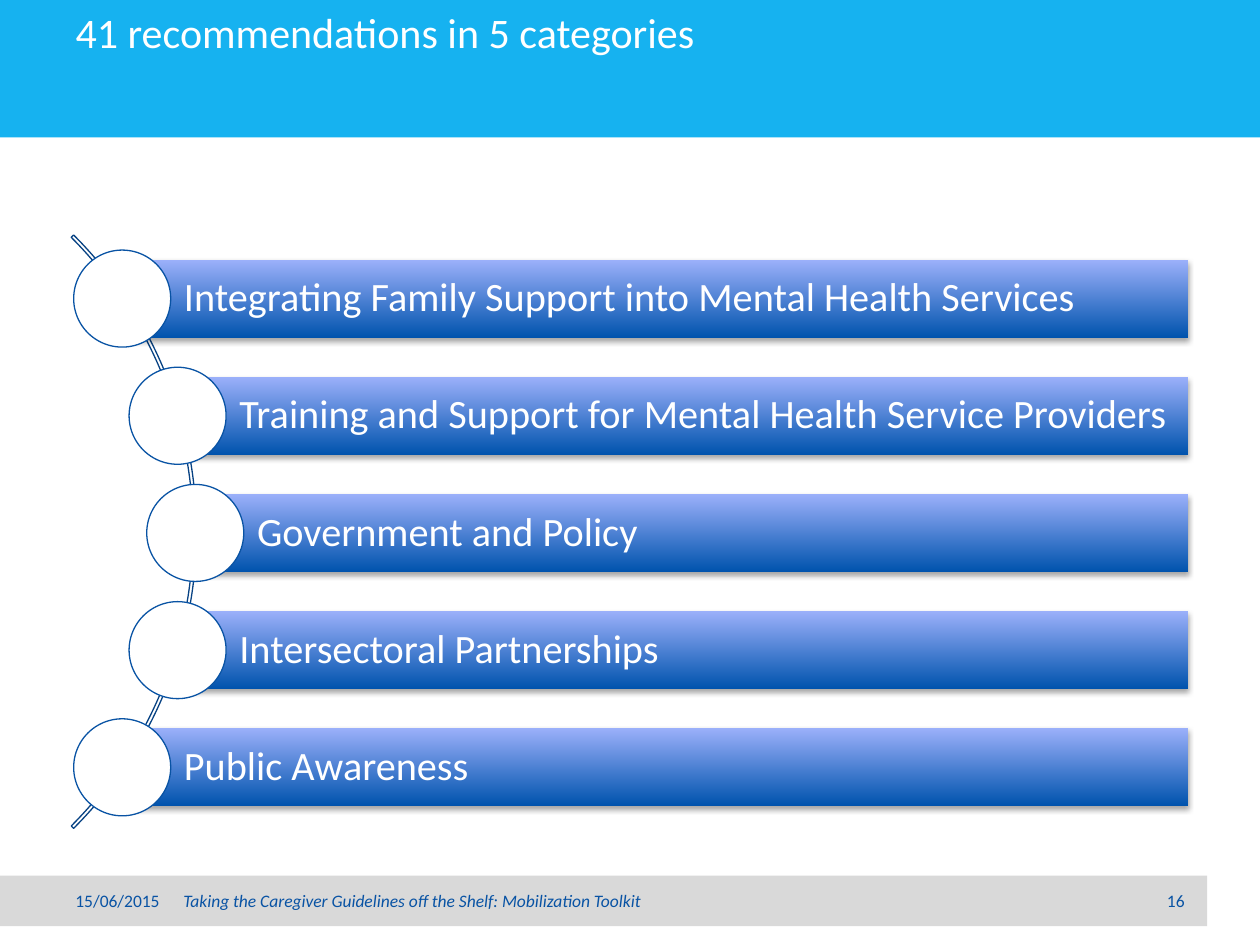
from dataclasses import dataclass

from lxml.etree import SubElement
from pptx import Presentation
from pptx.dml.color import RGBColor
from pptx.enum.shapes import MSO_SHAPE as Shape
from pptx.enum.text import MSO_ANCHOR as Anchor, MSO_AUTO_SIZE as AutoSize, PP_ALIGN as Align
from pptx.oxml.ns import qn
from pptx.util import Inches, Pt


@dataclass(frozen=True)
class Theme:
    font: str = "Calibri"
    white: str = "FFFFFF"
    header: str = "16B2F0"
    footer: str = "D9D9D9"
    ink: str = "0953A4"
    arc: str = "074283"
    bar_dark: str = "0053AD"
    bar_light: str = "9BB0FA"
    shadow: str = "000000"
    title_size: float = 24
    bar_size: float = 23
    footer_size: float = 10


theme = Theme()


def write_text(shape, text, size, color, align=Align.LEFT, anchor=Anchor.MIDDLE,
               italic=False, margins=(0.1, 0.05, 0.1, 0.05), line_spacing=1.0):
    frame = shape.text_frame
    frame.word_wrap = True
    frame.auto_size = AutoSize.NONE
    frame.vertical_anchor = anchor
    frame.margin_left, frame.margin_top, frame.margin_right, frame.margin_bottom = map(Inches, margins)
    paragraph = frame.paragraphs[0]
    paragraph.alignment = align
    paragraph.line_spacing = line_spacing
    run = paragraph.add_run()
    run.text = text
    run.font.name = theme.font
    run.font.size = Pt(size)
    run.font.italic = italic
    run.font.color.rgb = RGBColor.from_string(color)


def add_block(kind, left, top, width, height, fill=None, line=None):
    shape = slide.shapes.add_shape(kind, Inches(left), Inches(top), Inches(width), Inches(height))
    shape.shadow.inherit = False
    if fill:
        shape.fill.solid()
        shape.fill.fore_color.rgb = RGBColor.from_string(fill)
    else:
        shape.fill.background()
    if line:
        shape.line.color.rgb = RGBColor.from_string(line)
        shape.line.width = Pt(0.75)
    else:
        shape.line.fill.background()
    return shape


presentation = Presentation()
presentation.slide_width = Inches(10)
presentation.slide_height = Inches(7.5)
slide = presentation.slides.add_slide(presentation.slide_layouts[5])

add_block(Shape.RECTANGLE, 0, 6.95, 9.58, 0.4, theme.footer)
header = add_block(Shape.RECTANGLE, 0, 0, 10, 1.09, theme.header)

title = slide.shapes.title
header.element.addnext(title.element)
title.left, title.top, title.width, title.height = map(Inches, (0.5, 0, 9, 1.09))
write_text(title, "41 recommendations in 5 categories", theme.title_size, theme.white, anchor=Anchor.TOP)

arc = add_block(Shape.BLOCK_ARC, -5.1, 0.89, 6.66, 6.66, line=theme.arc)
for index, value in enumerate((189, 27, 0.004)):
    arc.adjustments[index] = value

categories = [
    ("Integrating Family Support into Mental Health Services", 0.97),
    ("Training and Support for Mental Health Service Providers", 1.41),
    ("Government and Policy", 1.55),
    ("Intersectoral Partnerships", 1.41),
    ("Public Awareness", 0.97),
]
first_center, pitch = 2.37, 0.93
bar_right, bar_height, circle_size = 9.43, 0.62, 0.77

for index, (category, left) in enumerate(categories):
    center = first_center + index * pitch
    bar = add_block(Shape.RECTANGLE, left, center - bar_height / 2, bar_right - left, bar_height)
    bar.fill.gradient()
    bar.fill.gradient_angle = 90
    for stop, color in zip(bar.fill.gradient_stops, (theme.bar_dark, theme.bar_light)):
        stop.color.rgb = RGBColor.from_string(color)
    effects = bar.element.spPr.find(qn("a:effectLst"))
    shadow = SubElement(effects, qn("a:outerShdw"), blurRad=str(Pt(3.1)), dist=str(Pt(1.8)),
                        dir="5400000", rotWithShape="0")
    shadow_color = SubElement(shadow, qn("a:srgbClr"), val=theme.shadow)
    SubElement(shadow_color, qn("a:alpha"), val="35000")
    write_text(bar, category, theme.bar_size, theme.white, margins=(0.49, 0.06, 0.06, 0.06), line_spacing=0.9)
    add_block(Shape.OVAL, left - circle_size / 2, center - circle_size / 2,
              circle_size, circle_size, theme.white, theme.ink)

footers = [
    ("16", 9.11, 0.39, Align.RIGHT, False),
    ("15/06/2015", 0.5, 1.05, Align.LEFT, False),
    ("Taking the Caregiver Guidelines off the Shelf: Mobilization Toolkit", 1.21, 4.12, Align.CENTER, True),
]
for text, left, width, align, italic in footers:
    box = slide.shapes.add_textbox(Inches(left), Inches(6.95), Inches(width), Inches(0.4))
    write_text(box, text, theme.footer_size, theme.ink, align=align, italic=italic)

presentation.save("out.pptx")
